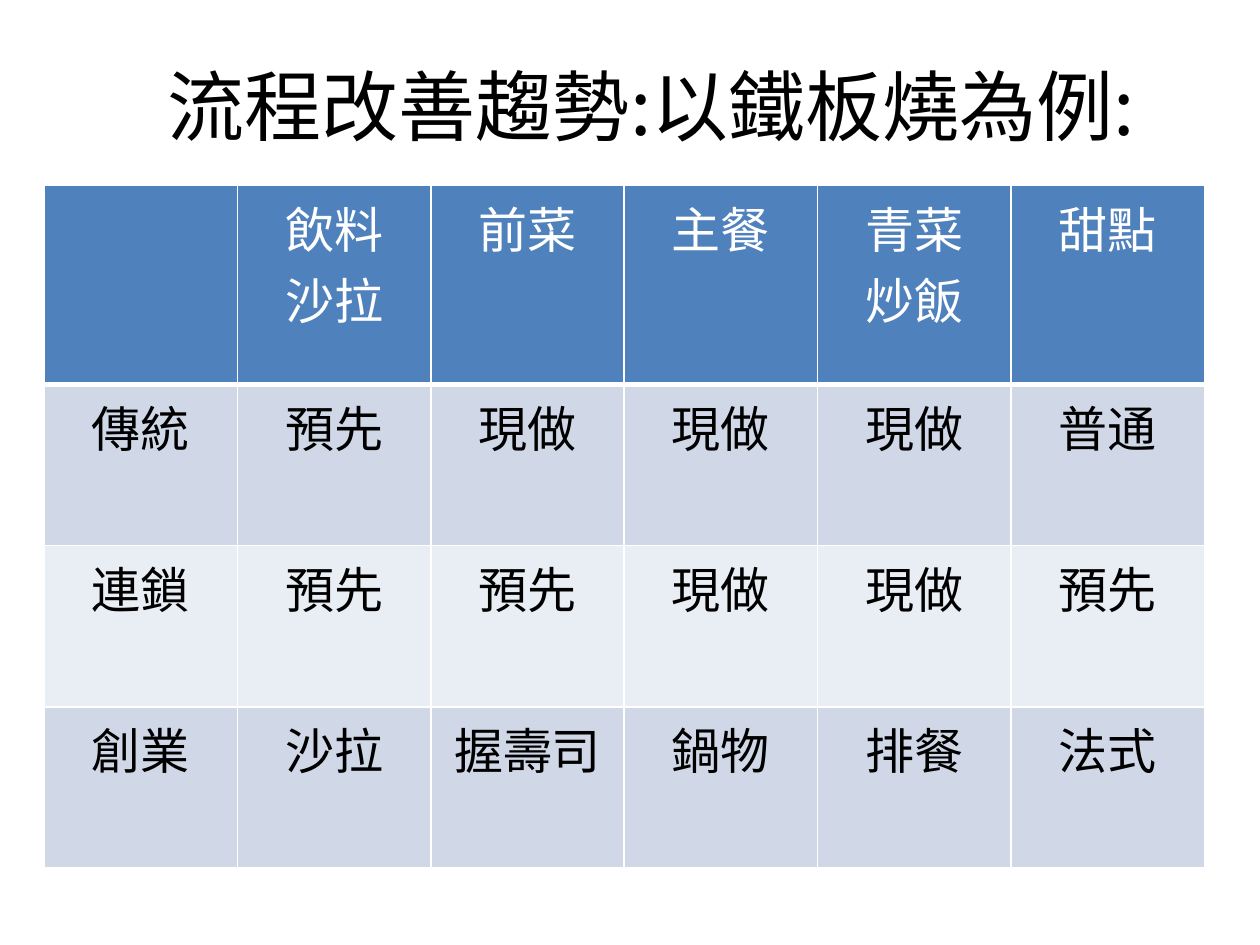
"""Build the slide on teppanyaki process improvement trends."""
from lxml.etree import SubElement
from pptx import Presentation
from pptx.dml.color import RGBColor as Color
from pptx.enum.text import MSO_ANCHOR as Anchor, PP_ALIGN as Align
from pptx.oxml.ns import qn
from pptx.util import Inches, Pt

THEME = {
    "font": "Noto Sans CJK SC",
    "title_size": 44,
    "cell_size": 28,
    "text": "000000",
    "header_text": "FFFFFF",
    "border": "FFFFFF",
    "row_fills": ["4F81BD", "D0D8E8", "E9EDF4", "D0D8E8"],
}
ROWS = [
    ["", "飲料\n沙拉", "前菜", "主餐", "青菜\n炒飯", "甜點"],
    ["傳統", "預先", "現做", "現做", "現做", "普通"],
    ["連鎖", "預先", "預先", "現做", "現做", "預先"],
    ["創業", "沙拉", "握壽司", "鍋物", "排餐", "法式"],
]
ROW_HEIGHTS = [1.58, 1.28, 1.28, 1.28]


def style_text(frame, size, color):
    for para in frame.paragraphs:
        para.alignment = Align.CENTER
        for span in para.runs:
            span.font.size = Pt(size)
            span.font.bold = False
            span.font.name = THEME["font"]
            span.font.color.rgb = Color.from_string(color)
            east_asian = SubElement(span.font._element, qn("a:ea"))
            east_asian.set("typeface", THEME["font"])


def add_borders(cell, widths):
    properties = cell._tc.get_or_add_tcPr()
    for position, (side, width) in enumerate(widths.items()):
        line = SubElement(properties, qn(f"a:ln{side}"), w=str(Pt(width)))
        fill = SubElement(line, qn("a:solidFill"))
        SubElement(fill, qn("a:srgbClr"), val=THEME["border"])
        properties.insert(position, line)


deck = Presentation()
deck.slide_width, deck.slide_height = Inches(10), Inches(7.5)
page = deck.slides.add_slide(deck.slide_layouts[5])

title = page.shapes.title
title.left, title.top = Inches(0.67), Inches(0.21)
title.width, title.height = Inches(9), Inches(1.25)
title.text_frame.text = "流程改善趨勢:以鐵板燒為例:"
title.text_frame.vertical_anchor = Anchor.MIDDLE
style_text(title.text_frame, THEME["title_size"], THEME["text"])

table = page.shapes.add_table(
    len(ROWS), len(ROWS[0]),
    Inches(0.35), Inches(1.47), Inches(9.21), Inches(sum(ROW_HEIGHTS)),
).table

for row_index, (labels, height) in enumerate(zip(ROWS, ROW_HEIGHTS)):
    table.rows[row_index].height = Inches(height)
    is_header = row_index == 0
    text_color = THEME["header_text"] if is_header else THEME["text"]
    for column_index, label in enumerate(labels):
        cell = table.cell(row_index, column_index)
        cell.text_frame.text = label
        style_text(cell.text_frame, THEME["cell_size"], text_color)
        cell.fill.solid()
        cell.fill.fore_color.rgb = Color.from_string(THEME["row_fills"][row_index])
        add_borders(cell, {"L": 1, "R": 1, "T": 1, "B": 3 if is_header else 1})

deck.save("out.pptx")
